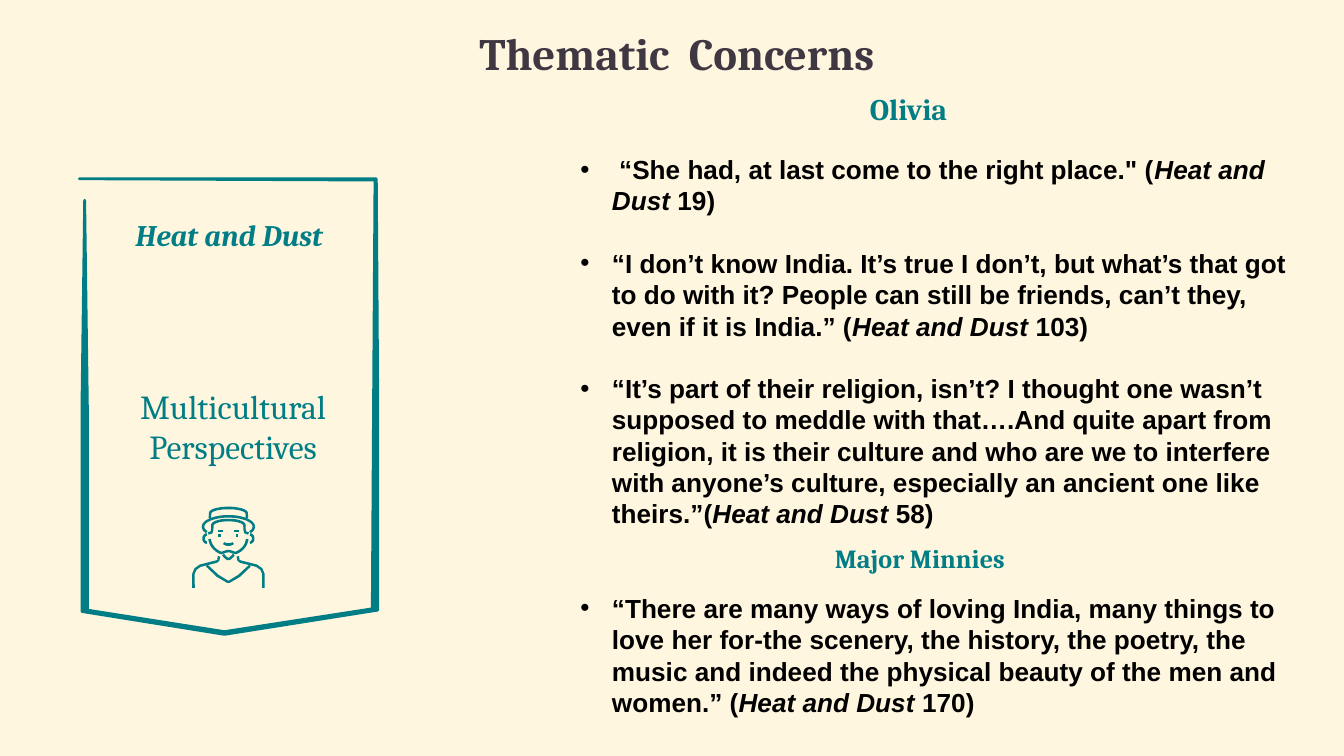
import math

import lxml.etree
import pptx
import pptx.dml.color
import pptx.enum.text
import pptx.oxml.ns
import pptx.util

# The slide is a grid of square cells, 100 columns wide
COLUMNS, ROWS = 100, 56.25
CELL = pptx.util.Inches(0.1)
FINE = 100  # freeform steps per cell

COLORS = {"paper": "FFF6E0", "teal": "007D85", "plum": "3F3742", "ink": "000000"}
SERIF, SANS = "Cambria", "Arial"
BOOK = "Heat and Dust"

# (space before in points, quotation, page)
QUOTES = [
    (0, " “She had, at last come to the right place.\" (", "19)"),
    (16.6, "“I don’t know India. It’s true I don’t, but what’s that got to do with it? "
     "People can still be friends, can’t they, even if it is India.” (", "103)"),
    (16.6, "“It’s part of their religion, isn’t? I thought one wasn’t supposed to meddle "
     "with that….And quite apart from religion, it is their culture and who are we to "
     "interfere with anyone’s culture, especially an ancient one like theirs.”(", "58)"),
    (33.7, "“There are many ways of loving India, many things to love her for-the scenery, "
     "the history, the poetry, the music and indeed the physical beauty of the men and "
     "women.” (", "170)"),
]

BANNER = [(28.1, 45.3), (28.1, 29.3), (28, 13.3), (5.9, 13.3), (27.9, 13.4),
          (27.8, 29.3), (27.7, 45.3), (16.7, 47), (6.5, 45.4), (6.5, 30.2),
          (6.3, 14.9), (6.1, 30.2), (6.1, 45.5), (16.7, 47.2), (28.1, 45.4)]
FACE_AXIS = 17
STROKE = 0.19  # thickness of the portrait's lines, in cells


def color(name):
    return pptx.dml.color.RGBColor.from_string(COLORS[name])


def cells(*lengths):
    return [round(length * CELL) for length in lengths]


def style(run, size, font, ink, bold=True, italic=False):
    run.font.size = pptx.util.Pt(size)
    run.font.name = font
    run.font.bold = bold
    run.font.italic = italic
    run.font.color.rgb = color(ink)


def add_box(slide, place, wrap=True):
    frame = slide.shapes.add_textbox(*cells(*place)).text_frame
    frame.word_wrap = wrap
    return frame


def add_label(slide, place, text, size, ink="teal", bold=True, italic=False,
              wrap=True, middle=False):
    frame = add_box(slide, place, wrap)
    if middle:
        frame.vertical_anchor = pptx.enum.text.MSO_ANCHOR.MIDDLE
        frame.margin_top = frame.margin_bottom = CELL
    frame.text = text
    line = frame.paragraphs[0]
    line.alignment = pptx.enum.text.PP_ALIGN.CENTER
    style(line.runs[0], size, SERIF, ink, bold, italic)


def add_bullet(paragraph, indent):
    properties = paragraph._p.get_or_add_pPr()
    properties.set("marL", str(indent))
    properties.set("indent", str(-indent))
    tag = pptx.oxml.ns.qn
    tint = lxml.etree.SubElement(properties, tag("a:buClr"))
    lxml.etree.SubElement(tint, tag("a:srgbClr"), val=COLORS["ink"])
    lxml.etree.SubElement(properties, tag("a:buFont"), typeface=SANS)
    lxml.etree.SubElement(properties, tag("a:buChar"), char="•")


def add_quotes(slide, place):
    frame = add_box(slide, place)
    for number, (gap, quotation, page) in enumerate(QUOTES):
        paragraph = frame.add_paragraph() if number else frame.paragraphs[0]
        add_bullet(paragraph, cells(2.35)[0])
        if gap:
            paragraph.space_before = pptx.util.Pt(gap)
        for text, italic in ((quotation, False), (BOOK + " ", True), (page, False)):
            run = paragraph.add_run()
            run.text = text
            style(run, 14, SANS, "ink", italic=italic)


def add_outline(slide, contours, border=0):
    """Draw closed contours as one filled freeform."""
    contours = [[(round(x * FINE), round(y * FINE)) for x, y in points]
                for points in contours]
    builder = slide.shapes.build_freeform(*contours[0][0], scale=CELL / FINE)
    for number, points in enumerate(contours):
        if number:
            builder.move_to(*points[0])
        builder.add_line_segments(points[1:], close=True)
    outline = builder.convert_to_shape()
    outline.shadow.inherit = False
    outline.fill.solid()
    outline.fill.fore_color.rgb = color("teal")
    if border:
        outline.line.color.rgb = color("teal")
        outline.line.width = pptx.util.Pt(border)
    else:
        outline.line.fill.background()


def arc(x, y, rx, ry, start, end, parts=16):
    angles = [math.radians(start + (end - start) * i / parts) for i in range(parts + 1)]
    return [(x + rx * math.cos(a), y + ry * math.sin(a)) for a in angles]


def mirror(points):
    return [(2 * FACE_AXIS - x, y) for x, y in points]


def symmetric(half):
    return half + mirror(half)[::-1]


def ribbon(points):
    """Turn an open line into a closed band of even thickness."""
    left, right = [], []
    for i, (x, y) in enumerate(points):
        before, after = points[max(i - 1, 0)], points[min(i + 1, len(points) - 1)]
        dx, dy = after[0] - before[0], after[1] - before[1]
        half = STROKE / 2 / math.hypot(dx, dy)
        left.append((x - dy * half, y + dx * half))
        right.append((x + dy * half, y - dx * half))
    return left + right[::-1]


def add_portrait(slide):
    # Hat, hair, face, chin and neckline lie across the axis
    crown = symmetric([(15.62, 38.55), *arc(FACE_AXIS, 38.2, 1.36, 0.4, 180, 265)])
    brim = arc(FACE_AXIS, 39.2, 1.9, 0.78, 148, 392)
    hair = symmetric([(15.5, 39.7), (15.75, 39.62), (15.8, 39.4),
                      *arc(FACE_AXIS, 39.1, 1.2, 0.4, 185, 265)])
    face = symmetric([*arc(FACE_AXIS, 40, 1.4, 1.25, 175, 112), (16.9, 41.02)])
    chin = symmetric([(16.6, 41.28), (16.8, 41.5), (16.95, 41.6)])
    neckline = symmetric([(15.4, 42.1), (16.2, 42.85), (16.95, 43.3)])

    # Ear and shoulder stand on both sides
    ear = arc(15.4, 40.08, 0.25, 0.3, 90, 270)
    shoulder = [(14.4, 43.75), (14.4, 42.7), (14.55, 42.35), (14.9, 42.1),
                (16.1, 41.8), (16.25, 41.7), (16.3, 41.4)]
    lines = [crown, brim, hair, face, chin, neckline]
    for side in (ear, shoulder):
        lines += [side, mirror(side)]
    add_outline(slide, [ribbon(line) for line in lines])

    # Mouth, eyes and brows
    add_outline(slide, [ribbon(arc(FACE_AXIS, 40.3, 0.4, 0.22, 150, 30))])
    for feature in ([(16.36, 39.7), (16.36, 39.97)], [(16.2, 39.5), (16.57, 39.5)]):
        add_outline(slide, [ribbon(feature)])
        add_outline(slide, [ribbon(mirror(feature))])


def main():
    deck = pptx.Presentation()
    deck.slide_width, deck.slide_height = cells(COLUMNS, ROWS)
    slide = deck.slides.add_slide(deck.slide_layouts[6])
    slide.background.fill.solid()
    slide.background.fill.fore_color.rgb = color("paper")

    add_label(slide, (6.25, 2.3, 88.2, 3.2), "Thematic  Concerns", 24, "plum", middle=True)

    # Banner with the theme and the book
    add_outline(slide, [BANNER], border=1.5)
    add_label(slide, (7.8, 29.7, 19.1, 4), "Multicultural Perspectives", 18,
              bold=False, middle=True)
    add_portrait(slide)

    # Quotations and their speakers
    add_quotes(slide, (42.2, 10.93, 54.7, 43.4))
    add_label(slide, (62.5, 6.25, 10.2, 3.7), "Olivia", 16)
    add_label(slide, (60.2, 39.85, 16.5, 3.4), "Major Minnies", 14, wrap=False)
    add_label(slide, (8.6, 15.6, 16.9, 3.7), BOOK, 16, italic=True, wrap=False)

    deck.save("out.pptx")


if __name__ == "__main__":
    main()
